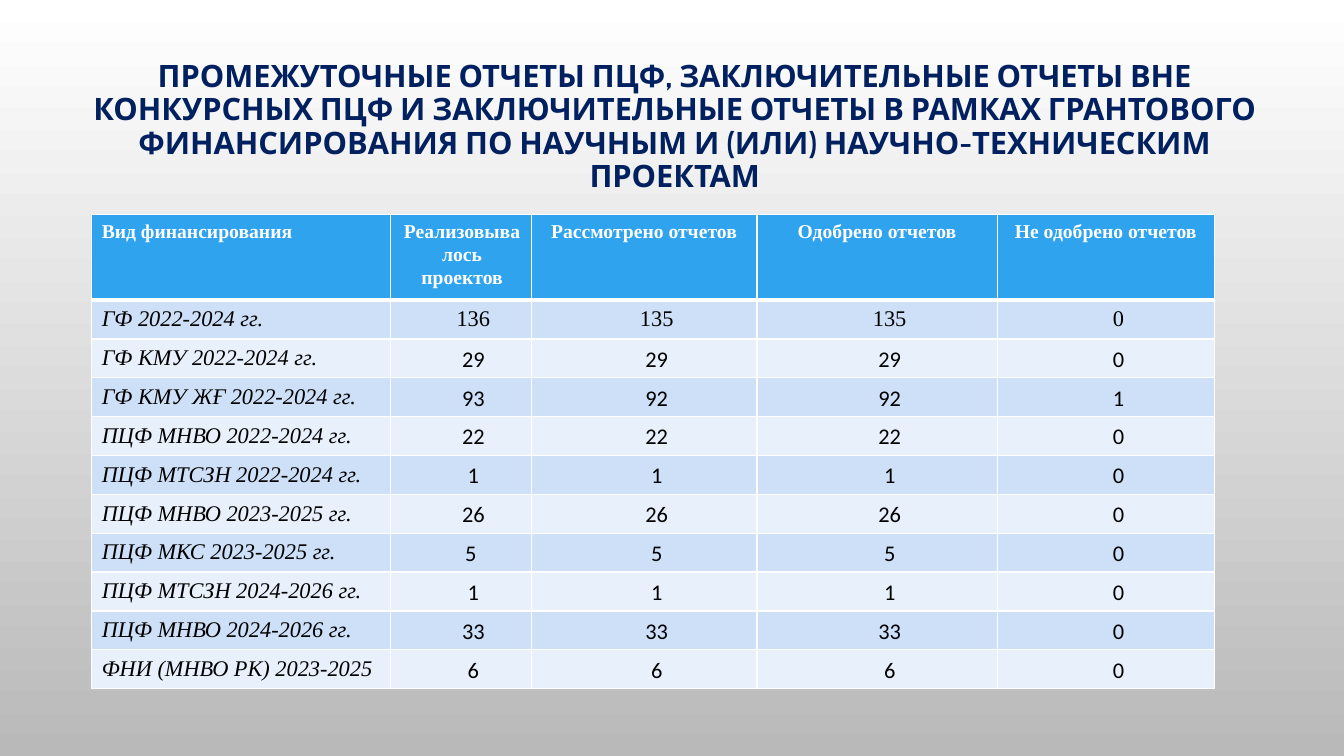
from lxml import etree
from pptx import Presentation
from pptx.dml.color import RGBColor
from pptx.enum import text
from pptx.oxml import ns
from pptx.util import Pt

COLORS = {"navy": "002060", "white": "FFFFFF", "gray": "B9B9B9", "black": "000000",
          "header": "2FA3EE", "odd": "CDE0F8", "even": "E8F0FC"}
CENTER, JUSTIFY = text.PP_ALIGN.CENTER, text.PP_ALIGN.JUSTIFY
SERIF, SANS, DISPLAY = "Times New Roman", "Calibri", "Cabin"

TITLE = ("ПРОМЕЖУТОЧНЫЕ ОТЧЕТЫ ПЦФ, ЗАКЛЮЧИТЕЛЬНЫЕ ОТЧЕТЫ ВНЕ КОНКУРСНЫХ ПЦФ "
         "И ЗАКЛЮЧИТЕЛЬНЫЕ ОТЧЕТЫ В РАМКАХ ГРАНТОВОГО ФИНАНСИРОВАНИЯ "
         "ПО НАУЧНЫМ И (ИЛИ) НАУЧНО-ТЕХНИЧЕСКИМ ПРОЕКТАМ")
FUNDING = [
    ("Вид финансирования", "Реализовывалось проектов", "Рассмотрено отчетов",
     "Одобрено отчетов", "Не одобрено отчетов"),
    ("ГФ 2022-2024 гг.", "136", "135", "135", "0"),
    ("ГФ КМУ 2022-2024 гг.", "29", "29", "29", "0"),
    ("ГФ КМУ ЖҒ 2022-2024 гг.", "93", "92", "92", "1"),
    ("ПЦФ МНВО 2022-2024 гг.", "22", "22", "22", "0"),
    ("ПЦФ МТСЗН 2022-2024 гг.", "1", "1", "1", "0"),
    ("ПЦФ МНВО 2023-2025 гг.", "26", "26", "26", "0"),
    ("ПЦФ МКС 2023-2025 гг.", "5 ", "5", "5", "0"),
    ("ПЦФ МТСЗН 2024-2026 гг.", "1", "1", "1", "0"),
    ("ПЦФ МНВО 2024-2026 гг.", "33", "33", "33", "0"),
    ("ФНИ (МНВО РК) 2023-2025", "6", "6", "6", "0"),
]
COLUMN_WIDTHS = [213.2, 100.8, 161.2, 171.6, 155.2]
HEADER_HEIGHT, ROW_HEIGHT = 34.6, 22.3


class FundingSlide:
    def __init__(self, deck):
        self.slide = deck.slides.add_slide(deck.slide_layouts[6])

    def color(self, name):
        return RGBColor.from_string(COLORS[name])

    def background(self, top, bottom):
        fill = self.slide.background.fill
        fill.gradient()
        fill.gradient_angle = 270
        for stop, name in zip(fill.gradient_stops, (top, bottom)):
            stop.color.rgb = self.color(name)

    def put_text(self, frame, words, font, size, color, align, spacing, bold=False, italic=False):
        frame.text = words
        paragraph = frame.paragraphs[0]
        paragraph.alignment = align
        paragraph.line_spacing = spacing
        style = paragraph.runs[0].font
        style.name, style.size = font, Pt(size)
        style.bold, style.italic = bold, italic
        style.color.rgb = self.color(color)
        return paragraph

    def title(self, words, left, top, width, height):
        frame = self.slide.shapes.add_textbox(Pt(left), Pt(top), Pt(width), Pt(height)).text_frame
        frame.word_wrap = True
        frame.vertical_anchor = text.MSO_ANCHOR.MIDDLE
        self.put_text(frame, words, DISPLAY, 22, "navy", CENTER, 0.9, bold=True)

    def borders(self, cell, **widths):
        properties = cell._tc.get_or_add_tcPr()
        for side in "LRTB":
            line = etree.SubElement(properties, ns.qn(f"a:ln{side}"), w=str(Pt(widths.get(side, 1))))
            fill = etree.SubElement(line, ns.qn("a:solidFill"))
            etree.SubElement(fill, ns.qn("a:srgbClr"), val=COLORS["white"])

    def table(self, rows, left, top, height):
        table = self.slide.shapes.add_table(len(rows), len(COLUMN_WIDTHS), Pt(left), Pt(top),
                                            Pt(sum(COLUMN_WIDTHS)), Pt(height)).table
        for column, width in zip(table.columns, COLUMN_WIDTHS):
            column.width = Pt(width)
        for r, row in enumerate(rows):
            table.rows[r].height = Pt(ROW_HEIGHT if r else HEADER_HEIGHT)
            for c, words in enumerate(row):
                self.cell(table.cell(r, c), words, r, c)

    def cell(self, cell, words, r, c):
        header, label = r == 0, c == 0
        # The header is parted from the body by a thicker line
        self.borders(cell, B=3 if header else 1, T=3 if r == 1 else 1)
        cell.fill.solid()
        cell.fill.fore_color.rgb = self.color("header" if header else "odd" if r % 2 else "even")
        paragraph = self.put_text(cell.text_frame, words,
                                  SERIF if label or r < 2 else SANS,
                                  14 if header else 16,
                                  "white" if header else "black",
                                  JUSTIFY if label else CENTER, 1.07,
                                  bold=header, italic=label and not header)
        indent = 0 if label else 18 if not header else 2 if c == 1 else 0
        if indent:
            paragraph._p.get_or_add_pPr().set("marL", str(Pt(indent)))


def main():
    deck = Presentation()
    deck.slide_width, deck.slide_height = Pt(960), Pt(540)
    page = FundingSlide(deck)
    # Background
    page.background("white", "gray")
    # Title
    page.title(TITLE, 54, 28.8, 856, 124.6)
    # Reports by kind of funding
    page.table(FUNDING, 65.5, 153.2, 328)
    deck.save("out.pptx")


if __name__ == "__main__":
    main()
